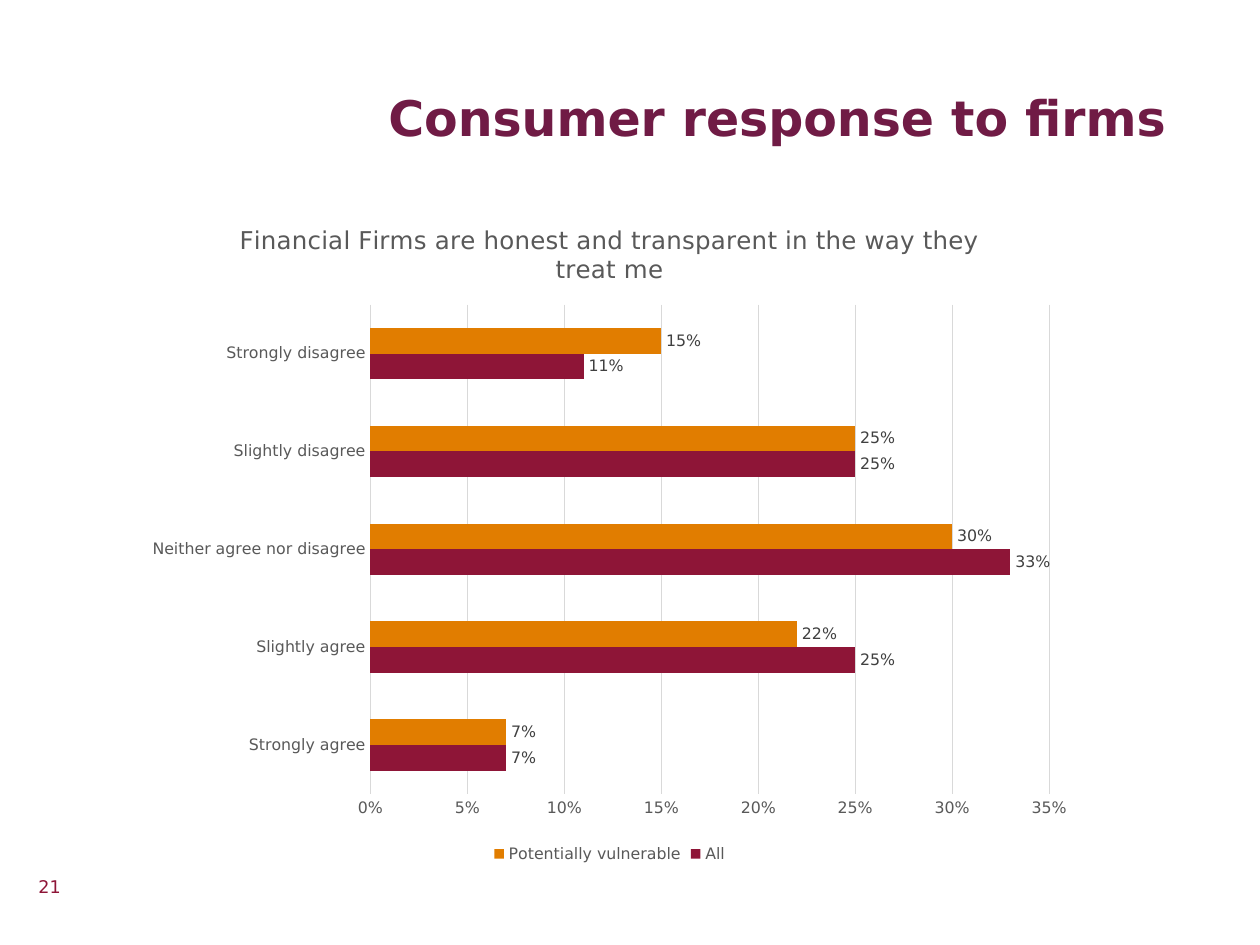
"""Build the slide on consumer response to firms."""
from pptx import Presentation
from pptx import util as u
from pptx.chart.data import CategoryChartData
from pptx.dml.color import RGBColor
from pptx.enum import chart as ch, text

TITLE = "Consumer response to firms"
NUMBER = "21"
CHART_TITLE = "Financial Firms are honest and transparent in the way they treat me"
ANSWERS = ["Strongly agree", "Slightly agree", "Neither agree nor disagree",
           "Slightly disagree", "Strongly disagree"]
GROUPS = {
    "All": (0.07, 0.25, 0.33, 0.25, 0.11),
    "Potentially vulnerable": (0.07, 0.22, 0.30, 0.25, 0.15),
}
COLORS = {"title": "701B45", "All": "8E1537", "Potentially vulnerable": "E17D00",
          "axis": "595959", "label": "404040", "grid": "D9D9D9"}
FONT = "DejaVu Sans"


def rgb(key):
    return RGBColor.from_string(COLORS[key])


def set_all(obj, **values):
    for name, value in values.items():
        setattr(obj, name, value)


def style(font, size, color, bold=False):
    set_all(font, name=FONT, size=u.Pt(size), bold=bold)
    font.color.rgb = rgb(color)


def place(sp, left, top, width, height):
    set_all(sp, left=u.Cm(left), top=u.Cm(top), width=u.Cm(width), height=u.Cm(height))


def write(sp, words, align, size, color, bold=False):
    tf = sp.text_frame
    set_all(tf, word_wrap=True, vertical_anchor=text.MSO_ANCHOR.MIDDLE)
    p = tf.paragraphs[0]
    p.alignment = align
    r = p.add_run()
    r.text = words
    style(r.font, size, color, bold)
    return tf


def rule(line):
    line.color.rgb = rgb("grid")
    line.width = u.Pt(0.75)


def add_answers_chart(s):
    data = CategoryChartData(number_format="0%")
    data.categories = ANSWERS
    for name, values in GROUPS.items():
        data.add_series(name, values)
    box = [u.Cm(v) for v in (2.69, 4.01, 19.2, 13.49)]
    chart = s.shapes.add_chart(ch.XL_CHART_TYPE.BAR_CLUSTERED, *box, data).chart
    style(chart.font, 10, "axis")

    tf = chart.chart_title.text_frame
    tf.text = CHART_TITLE
    style(tf.paragraphs[0].runs[0].font, 14, "axis")
    chart.chart_title.include_in_layout = False

    chart.has_legend = True
    set_all(chart.legend, position=ch.XL_LEGEND_POSITION.BOTTOM, include_in_layout=False)
    style(chart.legend.font, 9, "axis")

    for axis in (chart.category_axis, chart.value_axis):
        set_all(axis, major_tick_mark=ch.XL_TICK_MARK.NONE,
                minor_tick_mark=ch.XL_TICK_MARK.NONE)
        style(axis.tick_labels.font, 9, "axis")
    rule(chart.category_axis.format.line)
    chart.value_axis.has_major_gridlines = True
    rule(chart.value_axis.major_gridlines.format.line)
    chart.value_axis.format.line.fill.background()
    set_all(chart.value_axis.tick_labels, number_format="0%", number_format_is_linked=False)

    plot = chart.plots[0]
    set_all(plot, gap_width=182, overlap=0, vary_by_categories=False)
    for series in plot.series:
        series.invert_if_negative = False
        series.format.fill.solid()
        series.format.fill.fore_color.rgb = rgb(series.name)
        labels = series.data_labels
        set_all(labels, show_value=True, position=ch.XL_LABEL_POSITION.OUTSIDE_END,
                number_format="0%", number_format_is_linked=False)
        style(labels.font, 9, "label")


def main():
    prs = Presentation()
    set_all(prs, slide_width=u.Cm(25.4), slide_height=u.Cm(19.05))
    s = prs.slides.add_slide(prs.slide_layouts[5])

    title = s.shapes.title
    place(title, 1.9, 0.79, 21.6, 3.12)
    tf = write(title, TITLE, text.PP_ALIGN.RIGHT, 28, "title", bold=True)
    set_all(tf, margin_left=0, margin_top=0, margin_right=0, margin_bottom=0)

    number = s.shapes.add_textbox(0, 0, 0, 0)
    place(number, 0, 17.5, 2, 0.74)
    write(number, NUMBER, text.PP_ALIGN.CENTER, 10, "All")

    add_answers_chart(s)
    prs.save("out.pptx")


if __name__ == "__main__":
    main()
